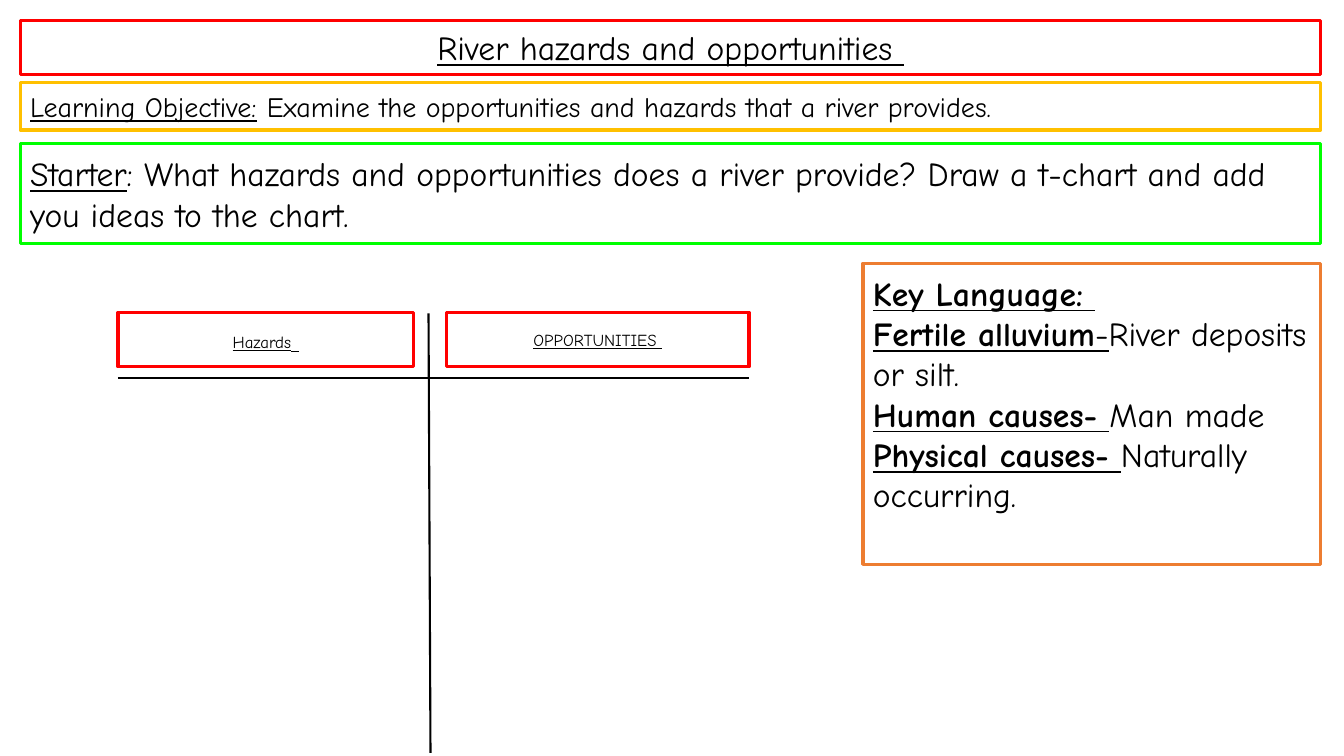
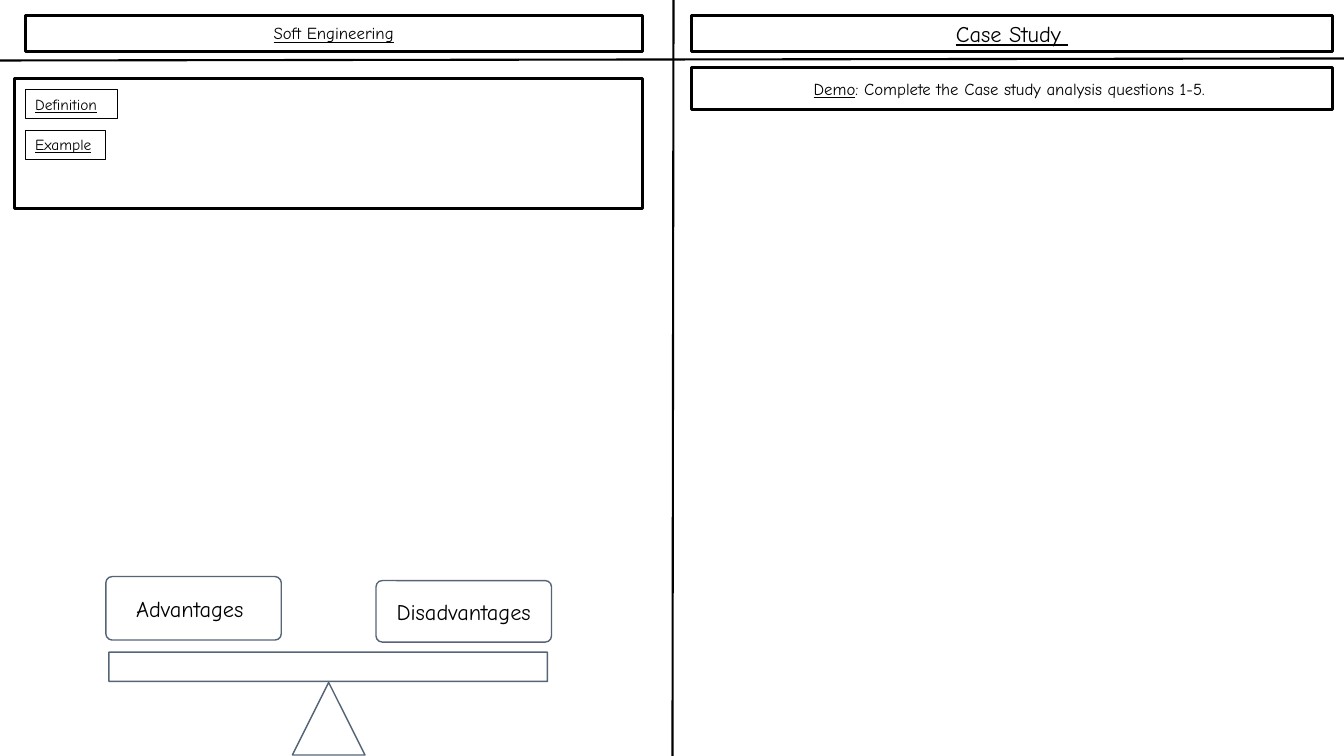
"""Build two geography lesson slides on river hazards and soft engineering."""
import pptx
import pptx.dml.color
import pptx.enum.shapes
import pptx.enum.text
import pptx.oxml.ns
import pptx.oxml.xmlchemy
import pptx.util

Inches = pptx.util.Inches
Pt = pptx.util.Pt
Shape = pptx.enum.shapes.MSO_SHAPE
Align = pptx.enum.text.PP_ALIGN


class Theme:
    font = "Comic Neue"
    black = "000000"
    white = "FFFFFF"
    red = "FF0000"
    amber = "FFC000"
    green = "00FF00"
    orange = "ED7D31"
    slate = "44546A"
    large = 24
    objective = 20
    medium = 16
    small = 12
    label = 11
    frame = 2.25
    rule = 1.5
    balance = 1
    thin = 0.75
    balance_opacity = 90


def add_box(page, paragraphs, at, color=Theme.black, size=Theme.small, weight=Theme.frame,
            align=Align.CENTER, kind=Shape.RECTANGLE, fill=None, opacity=None, bottom=0.05, side=0.1):
    """Add an outlined box; each span is (text, style letters b and u, optional size)."""
    box = page.shapes.add_shape(kind, *map(Inches, at))
    box.shadow.inherit = False
    box.line.color.rgb = pptx.dml.color.RGBColor.from_string(color)
    box.line.width = Pt(weight)
    if fill:
        box.fill.solid()
        box.fill.fore_color.rgb = pptx.dml.color.RGBColor.from_string(fill)
    else:
        box.fill.background()
    if opacity:
        for tint in box._element.spPr.iter(pptx.oxml.ns.qn("a:srgbClr")):
            alpha = pptx.oxml.xmlchemy.OxmlElement("a:alpha")
            alpha.set("val", str(opacity * 1000))
            tint.append(alpha)
    frame = box.text_frame
    frame.word_wrap = True
    frame.vertical_anchor = pptx.enum.text.MSO_ANCHOR.MIDDLE
    frame.margin_bottom = Inches(bottom)
    frame.margin_left = frame.margin_right = Inches(side)
    for index, spans in enumerate(paragraphs):
        para = frame.add_paragraph() if index else frame.paragraphs[0]
        para.alignment = align
        for words, style, *own_size in spans:
            span = para.add_run()
            span.text = words
            span.font.name = Theme.font
            span.font.size = Pt(own_size[0] if own_size else size)
            span.font.bold = "b" in style
            span.font.underline = "u" in style
            span.font.color.rgb = pptx.dml.color.RGBColor.from_string(Theme.black)
    return box


def add_rule(page, start, end):
    """Add a straight black line between two points."""
    rule = page.shapes.add_connector(
        pptx.enum.shapes.MSO_CONNECTOR.STRAIGHT, *map(Inches, (*start, *end)))
    rule.line.color.rgb = pptx.dml.color.RGBColor.from_string(Theme.black)
    rule.line.width = Pt(Theme.rule)
    rule._element.spPr.append(pptx.oxml.xmlchemy.OxmlElement("a:effectLst"))


deck = pptx.Presentation()
deck.slide_width = Inches(13.33)
deck.slide_height = Inches(7.5)
blank = deck.slide_layouts[6]

page = deck.slides.add_slide(blank)
left, width = 0.2, 12.9
add_box(page, [[("River hazards and opportunities ", "u")]], (left, 0.2, width, 0.54),
        color=Theme.red, size=Theme.large)
add_box(page, [[("Learning Objective:", "u"), (" ", "b"),
                ("Examine the opportunities and hazards that a river provides.", "")]],
        (left, 0.82, width, 0.47), color=Theme.amber, size=Theme.objective, align=Align.LEFT)
add_box(page, [[("Starter", "u"),
                (": What hazards and opportunities does a river provide? "
                 "Draw a t-chart and add you ideas to the chart.", "")]],
        (left, 1.42, width, 1), color=Theme.green, size=Theme.large, align=Align.LEFT)

add_rule(page, (4.25, 3.11), (4.27, 7.47))
add_rule(page, (1.17, 3.75), (7.43, 3.75))
for heading, heading_left, heading_width in (
        ([("Hazards", "u"), (" ", "u", Theme.medium)], 1.17, 2.93),
        ([("OPPORTUNITIES ", "u")], 4.43, 3)):
    add_box(page, [heading], (heading_left, 3.1, heading_width, 0.54), color=Theme.red)

key_language = [
    [("Key Language: ", "bu")],
    [("Fertile alluvium", "bu"), ("-", "u"), ("River deposits or silt.", "")],
    [("Human causes- ", "bu"), ("Man made", "")],
    [("Physical causes- ", "bu"), ("Naturally occurring.", "")],
]
add_box(page, key_language, (8.56, 2.61, 4.54, 2.99), color=Theme.orange,
        size=Theme.large, align=Align.LEFT, bottom=0.45)

page = deck.slides.add_slide(blank)
add_rule(page, (6.68, 0), (6.67, 7.5))
add_rule(page, (0, 0.6), (13.33, 0.58))
add_box(page, [[("Soft Engineering", "u")]], (0.25, 0.15, 6.12, 0.36))
add_box(page, [[("Case Study ", "u")]], (6.86, 0.15, 6.36, 0.36), size=Theme.medium)
add_box(page, [[("Demo", "u"), (": Complete the Case study analysis questions 1-5. ", "")]],
        (6.86, 0.67, 6.36, 0.42))

add_box(page, [], (0.14, 0.78, 6.23, 1.29))
for row, (label, label_width) in enumerate((("Definition", 0.92), ("Example", 0.8))):
    add_box(page, [[(label, "u")]], (0.25, 0.89 + row * 0.4, label_width, 0.29),
            size=Theme.label, weight=Theme.thin, align=Align.LEFT)

for kind, words, at in (
        (Shape.ROUNDED_RECTANGLE, "Advantages ", (1.05, 5.72, 1.74, 0.63)),
        (Shape.ROUNDED_RECTANGLE, "Disadvantages", (3.73, 5.76, 1.74, 0.61)),
        (Shape.ISOSCELES_TRIANGLE, "", (2.9, 6.77, 0.72, 0.72)),
        (Shape.RECTANGLE, "", (1.08, 6.47, 4.35, 0.29))):
    part = add_box(page, [[(words, "")]] if words else [], at, color=Theme.slate,
                   size=Theme.medium, weight=Theme.balance, kind=kind, fill=Theme.white,
                   opacity=Theme.balance_opacity, side=0.07)
    if kind == Shape.ROUNDED_RECTANGLE:
        part.adjustments[0] = 0.1

deck.save("out.pptx")
